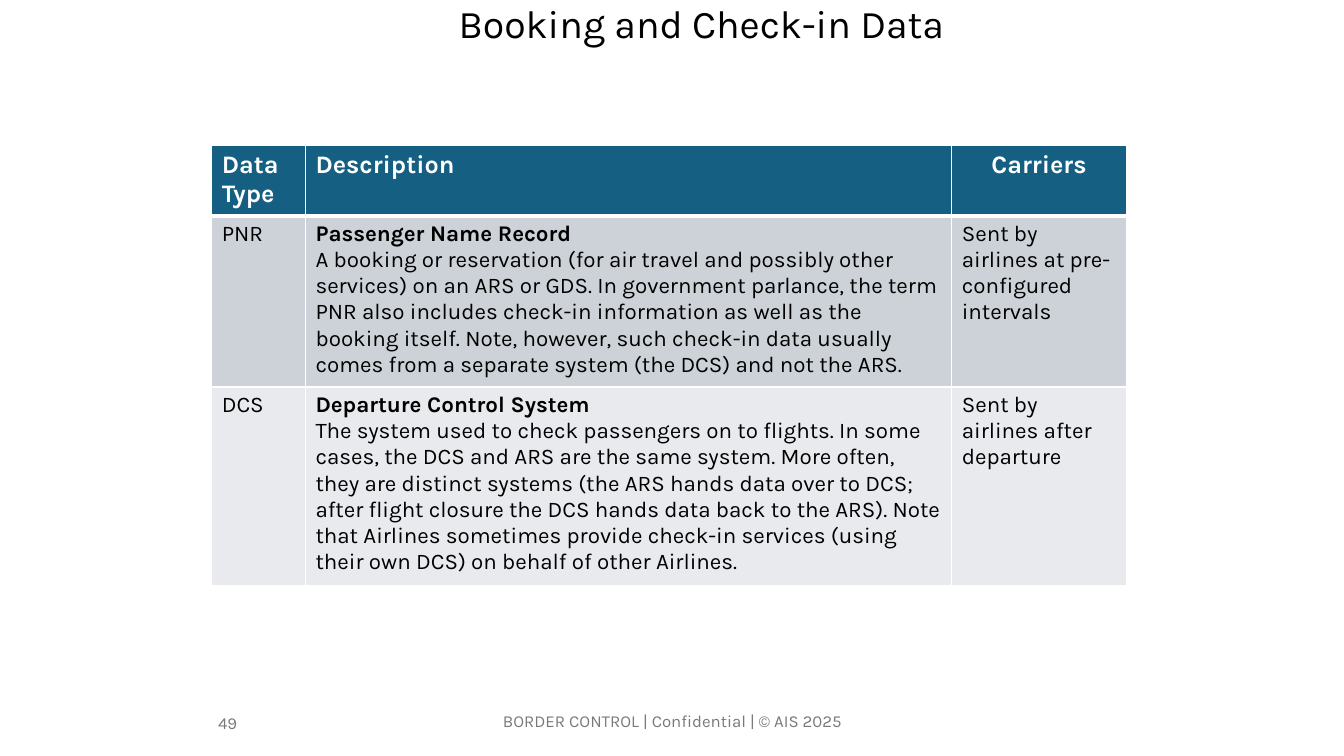
from lxml.etree import SubElement as Sub
from pptx import Presentation
from pptx.dml.color import RGBColor as RGB
from pptx.enum.text import MSO_ANCHOR as Anchor, PP_ALIGN as Align
from pptx.oxml.ns import qn
from pptx.util import Inches, Pt

WIDE, HIGH = Inches(13.33), Inches(7.5)
FONT = "Karla"
HUES = {
    "ink": "000000", "white": "FFFFFF", "grey": "797979",
    "head": "156082", "odd": "CCD2D8", "even": "E8EAED",
}
COLS = [0.93, 6.41, 1.73]
ROWS = [0.7, 1.7, 1.97]
DATA = [
    ["Data Type", "Description", "Carriers"],
    ["PNR",
     "Passenger Name Record\n"
     "A booking or reservation (for air travel and possibly other services) "
     "on an ARS or GDS. In government parlance, the term PNR also includes "
     "check-in information as well as the booking itself. Note, however, such "
     "check-in data usually comes from a separate system (the DCS) and not the ARS.",
     "Sent by airlines at pre-configured intervals"],
    ["DCS",
     "Departure Control System\n"
     "The system used to check passengers on to flights. In some cases, the DCS "
     "and ARS are the same system. More often, they are distinct systems (the ARS "
     "hands data over to DCS; after flight closure the DCS hands data back to the "
     "ARS). Note that Airlines sometimes provide check-in services (using their "
     "own DCS) on behalf of other Airlines.",
     "Sent by airlines after departure"],
]


def style(para, size, hue, bold=False, align=Align.LEFT):
    para.alignment = align
    for run in para.runs:
        font = run.font
        font.name, font.size, font.bold = FONT, Pt(size), bold
        font.color.rgb = RGB.from_string(HUES[hue])


def edge(cell, side, width):
    line = Sub(cell._tc.get_or_add_tcPr(), qn("a:ln" + side), w=str(Pt(width)))
    fill = Sub(line, qn("a:solidFill"))
    Sub(fill, qn("a:srgbClr"), val=HUES["white"])


# Title at the top of its box
def add_title(slide, box, text):
    title = slide.shapes.title
    title.left, title.top, title.width, title.height = box
    frame = title.text_frame
    frame.text = text
    frame.vertical_anchor = Anchor.TOP
    para = frame.paragraphs[0]
    para.line_spacing = 0.9
    style(para, 28, "ink", align=Align.CENTER)


# Table of data types
def add_grid(slide, box):
    table = slide.shapes.add_table(len(ROWS), len(COLS), *box).table
    for col, share in zip(table.columns, COLS):
        col.width = int(box[2] * share / sum(COLS))
    for row, share in zip(table.rows, ROWS):
        row.height = int(box[3] * share / sum(ROWS))
    for r, texts in enumerate(DATA):
        for c, text in enumerate(texts):
            fill_cell(table.cell(r, c), text, r, c)


def fill_cell(cell, text, r, c):
    head = r == 0
    for side in "LRTB":
        thick = (r, side) in ((0, "B"), (1, "T"))
        edge(cell, side, 3 if thick else 1)
    cell.fill.solid()
    cell.fill.fore_color.rgb = RGB.from_string(HUES[("head", "odd", "even")[r]])
    cell.text_frame.text = text
    for i, para in enumerate(cell.text_frame.paragraphs):
        bold = head or (c == 1 and i == 0)
        align = Align.CENTER if head and c == 2 else Align.LEFT
        style(para, 18 if head else 16, "white" if head else "ink", bold, align)


# Footer line and page number
def add_note(slide, box, text, align):
    frame = slide.shapes.add_textbox(*box).text_frame
    frame.word_wrap = True
    frame.vertical_anchor = Anchor.MIDDLE
    frame.text = text
    style(frame.paragraphs[0], 12, "grey", align=align)


def place(*sizes):
    return [Inches(size) for size in sizes]


def main():
    deck = Presentation()
    deck.slide_width, deck.slide_height = WIDE, HIGH
    slide = deck.slides.add_slide(deck.slide_layouts[5])
    add_title(slide, place(1.67, 0, 10.57, 1.27), "Booking and Check-in Data")
    add_note(slide, place(4.42, 6.95, 4.5, 0.4),
             "BORDER CONTROL | Confidential | © AIS 2025", Align.CENTER)
    add_note(slide, place(2.04, 6.97, 0.41, 0.4), "49", Align.RIGHT)
    add_grid(slide, place(2.1, 1.44, sum(COLS), sum(ROWS)))
    deck.save("out.pptx")


if __name__ == "__main__":
    main()
